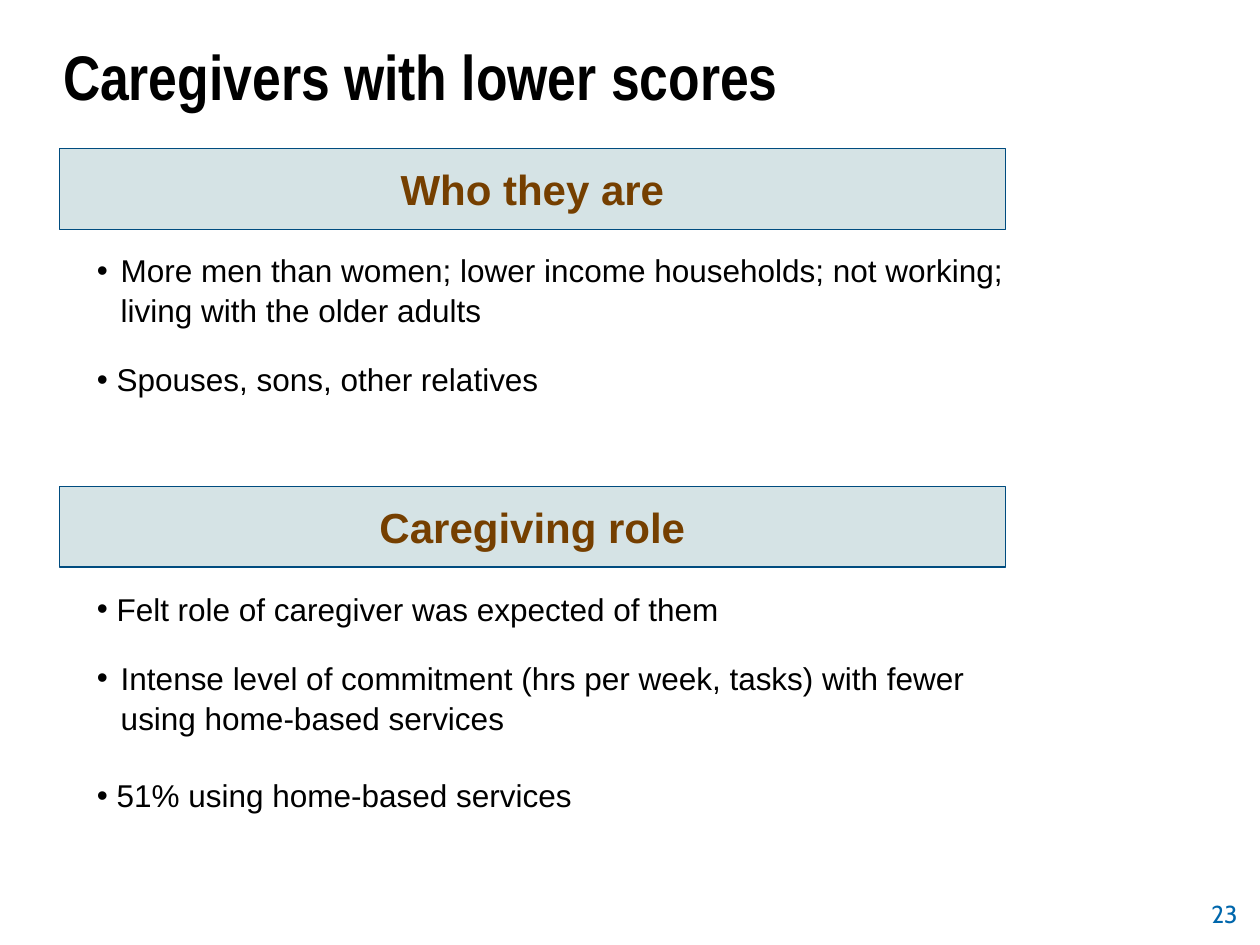
import pptx
import pptx.util
import pptx.dml.color
import pptx.enum.shapes
import pptx.enum.text
import lxml.etree

Pt = pptx.util.Pt
ALIGN = pptx.enum.text.PP_ALIGN
ANCHOR = pptx.enum.text.MSO_ANCHOR

COLORS = {"text": "000000", "band": "D5E3E5", "edge": "004C7F",
          "heading": "753F00", "number": "0067AC"}

TITLE = "Caregivers with lower scores"
HEADINGS = ["Who they are", "Caregiving role"]
WIDE, TIGHT = 13.7, 11.3
BULLETS = [
    ("More men than women; lower income households; not working; "
     "living with the older adults", WIDE, 0),
    ("Spouses, sons, other relatives", TIGHT, 16.9),
    ("Felt role of caregiver was expected of them", TIGHT, 108.5),
    ("Intense level of commitment (hrs per week, tasks) with fewer "
     "using home-based services", WIDE, 16.9),
    ("51% using home-based services", TIGHT, 21.7),
]
PAGE_NUMBER = "23"

HEADING_LEFT, HEADING_TOP, HEADING_STEP = 33.84, 84.96, 192.96
HEADING_WIDTH, HEADING_HEIGHT = 540.72, 46.08


def rgb(name):
    return pptx.dml.color.RGBColor.from_string(COLORS[name])


def write(paragraph, text, *, size, color="text", font="Arial", bold=False,
          align=ALIGN.LEFT, indent=0, before=0, spacing=1.0):
    paragraph.alignment = align
    paragraph.space_before = Pt(before)
    paragraph.line_spacing = spacing
    run = paragraph.add_run()
    run.text = text
    run.font.size = Pt(size)
    run.font.name = font
    run.font.bold = bold
    run.font.color.rgb = rgb(color)
    if indent:
        properties = paragraph._p.get_or_add_pPr()
        properties.set("marL", str(Pt(indent)))
        properties.set("indent", str(-Pt(indent)))
        namespace = properties.nsmap["a"]
        lxml.etree.SubElement(properties, f"{{{namespace}}}buFont", typeface="Arial")
        lxml.etree.SubElement(properties, f"{{{namespace}}}buChar", char="•")


def add_frame(slide, left, top, width, height, anchor):
    frame = slide.shapes.add_textbox(Pt(left), Pt(top), Pt(width), Pt(height)).text_frame
    frame.word_wrap = True
    frame.vertical_anchor = anchor
    return frame


def main():
    deck = pptx.Presentation()
    deck.slide_width, deck.slide_height = Pt(720), Pt(540)
    slide = deck.slides.add_slide(deck.slide_layouts[6])

    title = add_frame(slide, 36, 23.76, 558, 41.04, ANCHOR.BOTTOM)
    title.margin_left = title.margin_right = title.margin_top = title.margin_bottom = 0
    write(title.paragraphs[0], TITLE, size=36, font="Arial Narrow", bold=True)

    for row, text in enumerate(HEADINGS):
        heading = slide.shapes.add_shape(
            pptx.enum.shapes.MSO_SHAPE.RECTANGLE,
            Pt(HEADING_LEFT), Pt(HEADING_TOP + row * HEADING_STEP),
            Pt(HEADING_WIDTH), Pt(HEADING_HEIGHT))
        heading.shadow.inherit = False
        heading.fill.solid()
        heading.fill.fore_color.rgb = rgb("band")
        heading.line.color.rgb = rgb("edge")
        heading.line.width = Pt(0.75)
        heading.text_frame.vertical_anchor = ANCHOR.MIDDLE
        write(heading.text_frame.paragraphs[0], text, size=24, color="heading",
              bold=True, align=ALIGN.CENTER)

    findings = add_frame(slide, 48.24, 138.96, 532.8, 324.72, ANCHOR.TOP)
    for index, (text, indent, before) in enumerate(BULLETS):
        paragraph = findings.add_paragraph() if index else findings.paragraphs[0]
        write(paragraph, text, size=18, indent=indent, before=before, spacing=1.05)

    number = add_frame(slide, 564.48, 498.24, 149.76, 36, ANCHOR.BOTTOM)
    write(number.paragraphs[0], PAGE_NUMBER, size=14, color="number", font="Cabin",
          align=ALIGN.RIGHT)

    deck.save("out.pptx")


if __name__ == "__main__":
    main()
